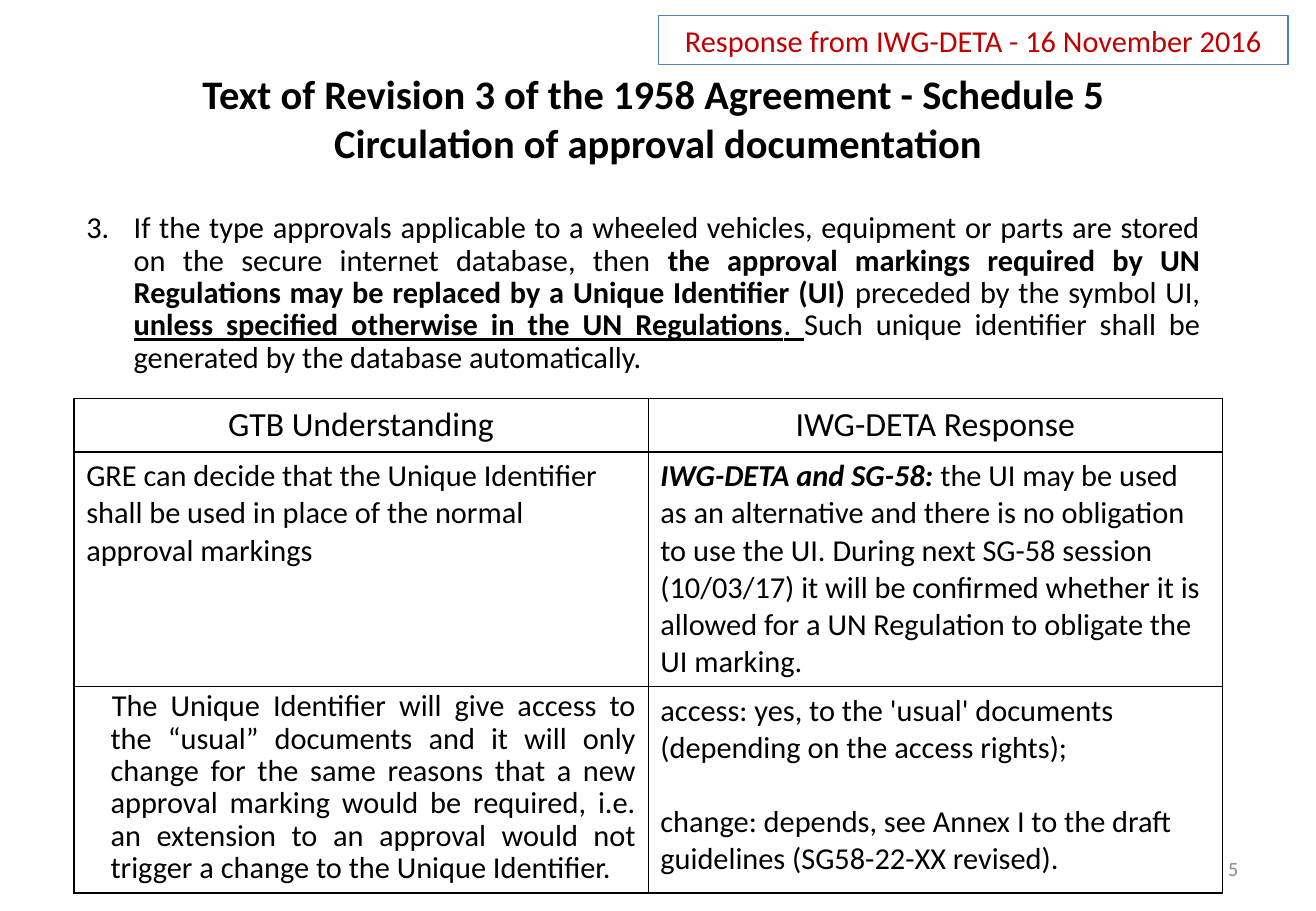
from lxml import etree
from pptx import Presentation
from pptx import util as u
from pptx.dml.color import RGBColor
from pptx.enum import shapes, text
from pptx.oxml import ns

BLACK, RED, BLUE, GREY = "000000", "C00000", "4F81BD", "8C8C8C"
ALIGN = text.PP_ALIGN


def color(hex_string):
    return RGBColor.from_string(hex_string)


class SlideBuilder:
    """Holds the text style and the slide being filled."""

    font_name = "Calibri"
    exact_line = u.Pt(19.2)

    def __init__(self, presentation):
        self.slide = presentation.slides.add_slide(presentation.slide_layouts[1])

    def place(self, shape, left, top, width, height):
        shape.left, shape.top = u.Inches(left), u.Inches(top)
        shape.width, shape.height = u.Inches(width), u.Inches(height)

    def fill_paragraph(self, paragraph, parts, size=18, align=ALIGN.LEFT, hex_string=BLACK,
                       line_spacing=None, margin=0, indent=0):
        paragraph.alignment = align
        paragraph.space_before = u.Pt(0)
        if line_spacing:
            paragraph.line_spacing = line_spacing
        properties = paragraph._p.get_or_add_pPr()
        properties.set("marL", str(u.Inches(margin)))
        properties.set("indent", str(u.Inches(indent)))
        for content, marks in parts:
            run = paragraph.add_run()
            run.text = content
            font = run.font
            font.name, font.size = self.font_name, u.Pt(size)
            font.bold, font.italic, font.underline = ("b" in marks, "i" in marks, "u" in marks)
            font.color.rgb = color(hex_string)

    def prepare(self, shape, anchor=text.MSO_ANCHOR.TOP):
        frame = shape.text_frame
        frame.word_wrap = True
        frame.auto_size = text.MSO_AUTO_SIZE.NONE
        frame.vertical_anchor = anchor
        return frame

    def title(self, lines, box):
        shape = self.slide.shapes.title
        self.place(shape, *box)
        frame = self.prepare(shape)
        for number, line in enumerate(lines):
            paragraph = frame.add_paragraph() if number else frame.paragraphs[0]
            self.fill_paragraph(paragraph, [(line, "b")], 24, ALIGN.CENTER)

    def numbered_body(self, parts, start, box):
        shape = self.slide.placeholders[1]
        self.place(shape, *box)
        paragraph = self.prepare(shape).paragraphs[0]
        properties = paragraph._p.get_or_add_pPr()
        etree.SubElement(properties, ns.qn("a:buFont"), typeface="+mj-lt")
        etree.SubElement(properties, ns.qn("a:buAutoNum"), type="arabicPeriod", startAt=str(start))
        self.fill_paragraph(paragraph, parts, align=ALIGN.JUSTIFY, line_spacing=self.exact_line,
                            margin=0.39, indent=-0.39)

    def table(self, box, row_heights):
        rows, columns = len(row_heights), 2
        frame = self.slide.shapes.add_table(rows, columns, *map(u.Inches, box))
        table = frame.table
        table.first_row = table.horz_banding = False
        for row, height in zip(table.rows, row_heights):
            row.height = u.Inches(height)
        for cell in table.iter_cells():
            cell.fill.background()
            self.border(cell)
        return table

    def border(self, cell):
        properties = cell._tc.get_or_add_tcPr()
        for position, side in enumerate(("lnL", "lnR", "lnT", "lnB")):
            line = etree.Element(ns.qn(f"a:{side}"), w=str(u.Pt(1)))
            fill = etree.SubElement(line, ns.qn("a:solidFill"))
            etree.SubElement(fill, ns.qn("a:srgbClr"), val=BLACK)
            properties.insert(position, line)

    def banner(self, content, box):
        shape = self.slide.shapes.add_shape(shapes.MSO_SHAPE.RECTANGLE, *map(u.Inches, box))
        shape.shadow.inherit = False
        shape.fill.background()
        shape.line.color.rgb = color(BLUE)
        shape.line.width = u.Pt(0.75)
        self.fill_paragraph(self.prepare(shape).paragraphs[0], [(content, "")],
                            align=ALIGN.CENTER, hex_string=RED)

    def page_number(self, number, box):
        shape = self.slide.shapes.add_textbox(*map(u.Inches, box))
        frame = self.prepare(shape, text.MSO_ANCHOR.MIDDLE)
        self.fill_paragraph(frame.paragraphs[0], [(number, "")], 12, ALIGN.RIGHT, GREY)


def main():
    presentation = Presentation()
    presentation.slide_width, presentation.slide_height = u.Inches(10.83), u.Inches(7.5)
    builder = SlideBuilder(presentation)

    builder.title(["Text of Revision 3 of the 1958 Agreement - Schedule 5 ",
                   "Circulation of approval documentation"], (0, 0.52, 10.83, 1.31))
    builder.numbered_body([
        ("If the type approvals applicable to a wheeled vehicles, equipment or parts are "
         "stored on the secure internet database, then ", ""),
        ("the approval markings required by UN Regulations may be replaced by a Unique "
         "Identifier (UI) ", "b"),
        ("preceded by the symbol UI, ", ""),
        ("unless specified otherwise in the UN Regulations", "bu"),
        (". ", "u"),
        ("Such unique identifier shall be generated by the database automatically.", ""),
    ], 3, (0.61, 1.7, 9.37, 1.43))

    table = builder.table((0.61, 3.28, 9.45, 4.02), (0.43, 1.9, 1.69))
    for column, heading in enumerate(("GTB Understanding", "IWG-DETA Response")):
        builder.fill_paragraph(table.cell(0, column).text_frame.paragraphs[0],
                               [(heading, "")], 20, ALIGN.CENTER)
    builder.fill_paragraph(table.cell(1, 0).text_frame.paragraphs[0], [
        ("GRE can decide that the Unique Identifier shall be used in place of the normal "
         "approval markings", "")])
    builder.fill_paragraph(table.cell(1, 1).text_frame.paragraphs[0], [
        ("IWG-DETA and SG-58: ", "bi"),
        ("the UI may be used as an alternative and there is no obligation to use the UI. "
         "During next SG-58 session (10/03/17) it will be confirmed whether it is allowed "
         "for a UN Regulation to obligate the UI marking.", "")])
    builder.fill_paragraph(table.cell(2, 0).text_frame.paragraphs[0], [
        ("The Unique Identifier will give access to the “usual” documents and it will only "
         "change for the same reasons that a new approval marking would be required, i.e. "
         "an extension to an approval would not trigger a change to the Unique Identifier.", "")],
        align=ALIGN.JUSTIFY, line_spacing=builder.exact_line, margin=0.2, indent=0.01)
    answer = table.cell(2, 1).text_frame
    builder.fill_paragraph(answer.paragraphs[0], [
        ("access: yes, to the 'usual' documents (depending on the access rights);", "")])
    change = answer.add_paragraph()
    builder.fill_paragraph(change, [
        ("change: depends, see Annex I to the draft guidelines (SG58-22-XX revised).", "")])
    change.space_before = u.Pt(22)

    builder.banner("Response from IWG-DETA - 16 November 2016", (5.42, 0.13, 5.18, 0.4))
    builder.page_number("5", (7.76, 6.95, 2.53, 0.4))
    presentation.save("out.pptx")


if __name__ == "__main__":
    main()
